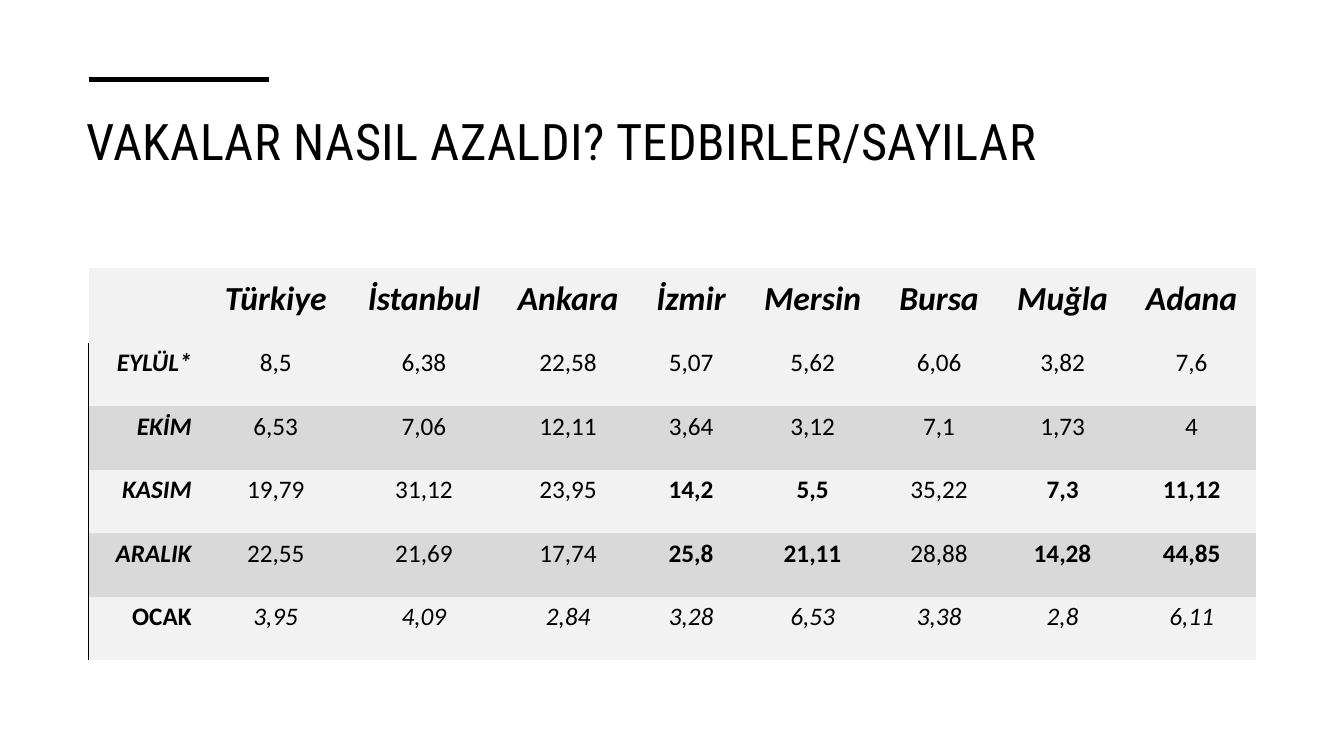
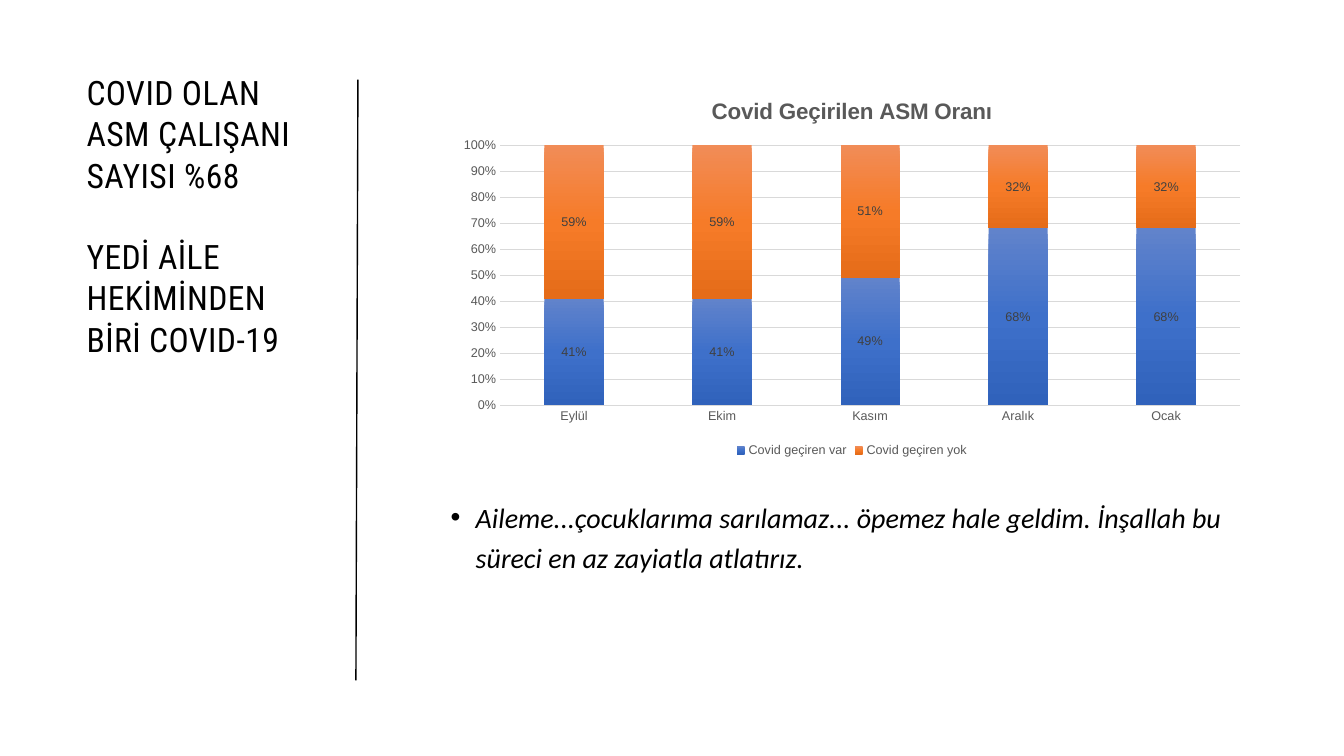
from dataclasses import dataclass

from lxml.etree import SubElement
from pptx import Presentation
from pptx.chart.data import CategoryChartData
from pptx.dml.color import RGBColor
from pptx.enum.chart import XL_CHART_TYPE, XL_LABEL_POSITION, XL_LEGEND_POSITION, XL_TICK_MARK
from pptx.enum.shapes import MSO_CONNECTOR
from pptx.enum.text import MSO_ANCHOR, PP_ALIGN
from pptx.oxml import parse_xml
from pptx.oxml.ns import nsdecls, qn
from pptx.util import Inches, Pt

BLACK = "000000"
LIGHT, DARK = "F2F2F2", "D9D9D9"
AXIS_GRAY, LABEL_GRAY = "595959", "404040"
TITLE_FONT, BODY_FONT, CHART_FONT = "Roboto Condensed", "Calibri", "Arial"
NO_TABLE_STYLE = "{2D5ABB26-0587-4C30-8999-92F81FD0307C}"


@dataclass(frozen=True)
class Area:
    left: float
    top: float
    width: float
    height: float

    def lengths(self):
        return [Inches(value) for value in (self.left, self.top, self.width, self.height)]


@dataclass(frozen=True)
class Month:
    label: str
    values: str
    bold_columns: tuple = ()
    label_italic: bool = True
    values_italic: bool = False


@dataclass(frozen=True)
class Share:
    name: str
    values: tuple
    gradient: tuple


CITIES = ("Türkiye", "İstanbul", "Ankara", "İzmir", "Mersin", "Bursa", "Muğla", "Adana")
COLUMN_WIDTHS = (1.13, 1.45, 1.49, 1.37, 1.07, 1.34, 1.17, 1.28, 1.28)
HEADER_HEIGHT, MONTH_HEIGHT = 0.74, 0.63
SMALL_CITIES = (4, 5, 7, 8)
MONTHS = (
    Month("EYLÜL*", "8,5 6,38 22,58 5,07 5,62 6,06 3,82 7,6"),
    Month("EKİM", "6,53 7,06 12,11 3,64 3,12 7,1 1,73 4"),
    Month("KASIM", "19,79 31,12 23,95 14,2 5,5 35,22 7,3 11,12", SMALL_CITIES),
    Month("ARALIK", "22,55 21,69 17,74 25,8 21,11 28,88 14,28 44,85", SMALL_CITIES),
    Month("OCAK", "3,95 4,09 2,84 3,28 6,53 3,38 2,8 6,11", (), False, True),
)
CHART_MONTHS = ("Eylül", "Ekim", "Kasım", "Aralık", "Ocak")
SHARES = (
    Share("Covid geçiren var", (0.41, 0.41, 0.49, 0.68, 0.68), ("6183CB", "3E70CA", "3062BB")),
    Share("Covid geçiren yok", (0.59, 0.59, 0.51, 0.32, 0.32), ("F18C57", "F67B28", "E56C19")),
)


def color(value: str) -> RGBColor:
    return RGBColor.from_string(value)


def style_font(font, name: str, size: float, shade: str, bold: bool = False, italic: bool = False) -> None:
    font.name = name
    font.size = Pt(size)
    font.color.rgb = color(shade)
    font.bold = bold
    font.italic = italic


def add_span(para, text: str, name: str, size: float, bold: bool = False, italic: bool = False):
    span = para.add_run()
    span.text = text
    style_font(span.font, name, size, BLACK, bold, italic)
    return span


def add_box(page, area: Area, anchor=MSO_ANCHOR.TOP):
    frame = page.shapes.add_textbox(*area.lengths()).text_frame
    frame.word_wrap = True
    frame.vertical_anchor = anchor
    return frame


def add_title(page, area: Area, texts: tuple, size: float, anchor=MSO_ANCHOR.TOP) -> None:
    frame = add_box(page, area, anchor)
    for index, text in enumerate(texts):
        para = frame.add_paragraph() if index else frame.paragraphs[0]
        para.line_spacing = 1.02
        para.space_before = Pt(29 if index else 0)
        span = add_span(para, text, TITLE_FONT, size)
        span.font._element.set("spc", "30")


def add_rule(page, start: tuple, end: tuple, width: float) -> None:
    points = [Inches(value) for value in (*start, *end)]
    rule = page.shapes.add_connector(MSO_CONNECTOR.STRAIGHT, *points)
    rule.line.color.rgb = color(BLACK)
    rule.line.width = Pt(width)
    SubElement(rule._element.spPr, qn("a:effectLst"))


def add_left_border(cell) -> None:
    border = parse_xml(
        f'<a:lnL {nsdecls("a")} w="12700"><a:solidFill><a:srgbClr val="{BLACK}"/></a:solidFill></a:lnL>'
    )
    cell._tc.get_or_add_tcPr().insert(0, border)


def fill_cell(cell, text: str, shade: str, size: float, align, bold: bool, italic: bool) -> None:
    cell.fill.solid()
    cell.fill.fore_color.rgb = color(shade)
    cell.margin_left = cell.margin_right = Inches(0.11)
    cell.margin_top, cell.margin_bottom = Inches(0.03), Inches(0.23)
    para = cell.text_frame.paragraphs[0]
    para.alignment = align
    para.line_spacing = 1.07
    if text:
        add_span(para, text, BODY_FONT, size, bold, italic)


def add_case_table(page) -> None:
    height = HEADER_HEIGHT + MONTH_HEIGHT * len(MONTHS)
    area = Area(0.88, 2.66, sum(COLUMN_WIDTHS), height)
    holder = page.shapes.add_table(len(MONTHS) + 1, len(COLUMN_WIDTHS), *area.lengths())
    table = holder.table
    table._tbl.tblPr.find(qn("a:tableStyleId")).text = NO_TABLE_STYLE
    table.first_row = table.horz_banding = False
    for column, width in zip(table.columns, COLUMN_WIDTHS):
        column.width = Inches(width)
    for index, row in enumerate(table.rows):
        row.height = Inches(MONTH_HEIGHT if index else HEADER_HEIGHT)
    for column, city in enumerate(("", *CITIES)):
        cell = table.cell(0, column)
        fill_cell(cell, city, LIGHT, 24, PP_ALIGN.CENTER, True, True)
        cell.vertical_anchor = MSO_ANCHOR.BOTTOM
    for row, month in enumerate(MONTHS, 1):
        shade = LIGHT if row % 2 else DARK
        label = table.cell(row, 0)
        fill_cell(label, month.label, shade, 18, PP_ALIGN.RIGHT, True, month.label_italic)
        add_left_border(label)
        for column, value in enumerate(month.values.split(), 1):
            bold = column in month.bold_columns
            fill_cell(table.cell(row, column), value, shade, 18, PP_ALIGN.CENTER, bold, month.values_italic)


def fill_gradient(series, shades: tuple) -> None:
    stops = "".join(
        f'<a:gs pos="{index * 50000}"><a:srgbClr val="{shade}"/></a:gs>' for index, shade in enumerate(shades)
    )
    gradient = parse_xml(
        f'<a:gradFill {nsdecls("a")} rotWithShape="1"><a:gsLst>{stops}</a:gsLst>'
        '<a:lin ang="5400000" scaled="0"/></a:gradFill>'
    )
    series._element.get_or_add_spPr().append(gradient)


def add_share_chart(page) -> None:
    data = CategoryChartData(number_format="0%")
    data.categories = CHART_MONTHS
    for share in SHARES:
        data.add_series(share.name, share.values)
    area = Area(4.44, 0.79, 8.02, 3.79)
    chart = page.shapes.add_chart(XL_CHART_TYPE.COLUMN_STACKED_100, *area.lengths(), data).chart
    style_font(chart.font, CHART_FONT, 10, BLACK)

    chart.has_title = True
    para = chart.chart_title.text_frame.paragraphs[0]
    span = add_span(para, "Covid Geçirilen ASM Oranı", CHART_FONT, 16, True)
    span.font.color.rgb = color(AXIS_GRAY)
    chart.chart_title.include_in_layout = False

    chart.has_legend = True
    chart.legend.position = XL_LEGEND_POSITION.BOTTOM
    chart.legend.include_in_layout = False
    for owner in (chart.legend, chart.category_axis.tick_labels, chart.value_axis.tick_labels):
        style_font(owner.font, CHART_FONT, 9, AXIS_GRAY)

    for axis in (chart.category_axis, chart.value_axis):
        axis.major_tick_mark = axis.minor_tick_mark = XL_TICK_MARK.NONE
    chart.category_axis.format.line.color.rgb = color(DARK)
    chart.category_axis.format.line.width = Pt(1)
    values = chart.value_axis
    values.minimum_scale, values.maximum_scale, values.major_unit = 0, 1, 0.1
    values.tick_labels.number_format = "0%"
    values.tick_labels.number_format_is_linked = False
    values.format.line.fill.background()
    values.major_gridlines.format.line.color.rgb = color(DARK)
    values.major_gridlines.format.line.width = Pt(0.75)

    plot = chart.plots[0]
    plot.gap_width, plot.overlap = 150, 100
    plot.vary_by_categories = False
    for series, share in zip(plot.series, SHARES):
        fill_gradient(series, share.gradient)
        labels = series.data_labels
        labels.show_value = True
        labels.number_format = "0%"
        labels.number_format_is_linked = False
        labels.position = XL_LABEL_POSITION.CENTER
        style_font(labels.font, CHART_FONT, 9, LABEL_GRAY)


def add_bullet(page, area: Area, text: str) -> None:
    para = add_box(page, area).paragraphs[0]
    para.line_spacing = 1.2
    properties = para._p.get_or_add_pPr()
    properties.set("marL", str(Inches(0.25)))
    properties.set("indent", str(-Inches(0.25)))
    SubElement(properties, qn("a:buFont")).set("typeface", CHART_FONT)
    SubElement(properties, qn("a:buChar")).set("char", "•")
    add_span(para, text, BODY_FONT, 20, italic=True)


def build_case_page(page) -> None:
    title = ("VAKALAR NASIL AZALDI? TEDBIRLER/SAYILAR",)
    add_title(page, Area(0.76, 1, 11.89, 0.77), title, 36, MSO_ANCHOR.MIDDLE)
    add_rule(page, (0.88, 0.79), (2.67, 0.79), 3.5)
    add_case_table(page)


def build_share_page(page) -> None:
    title = ("COVID OLAN ASM ÇALIŞANI SAYISI %68", "YEDİ AİLE HEKİMİNDEN BİRİ COVID-19")
    add_title(page, Area(0.76, 0.66, 2.59, 6.09), title, 24)
    add_rule(page, (3.53, 6.75), (3.55, 0.79), 1)
    quote = "Aileme...çocuklarıma sarılamaz... öpemez hale geldim. İnşallah bu süreci en az zayiatla atlatırız."
    add_bullet(page, Area(4.37, 4.85, 8.17, 1.95), quote)
    add_share_chart(page)


def main() -> None:
    deck = Presentation()
    deck.slide_width, deck.slide_height = Inches(13.33), Inches(7.5)
    for build in (build_case_page, build_share_page):
        build(deck.slides.add_slide(deck.slide_layouts[6]))
    deck.save("out.pptx")


if __name__ == "__main__":
    main()
